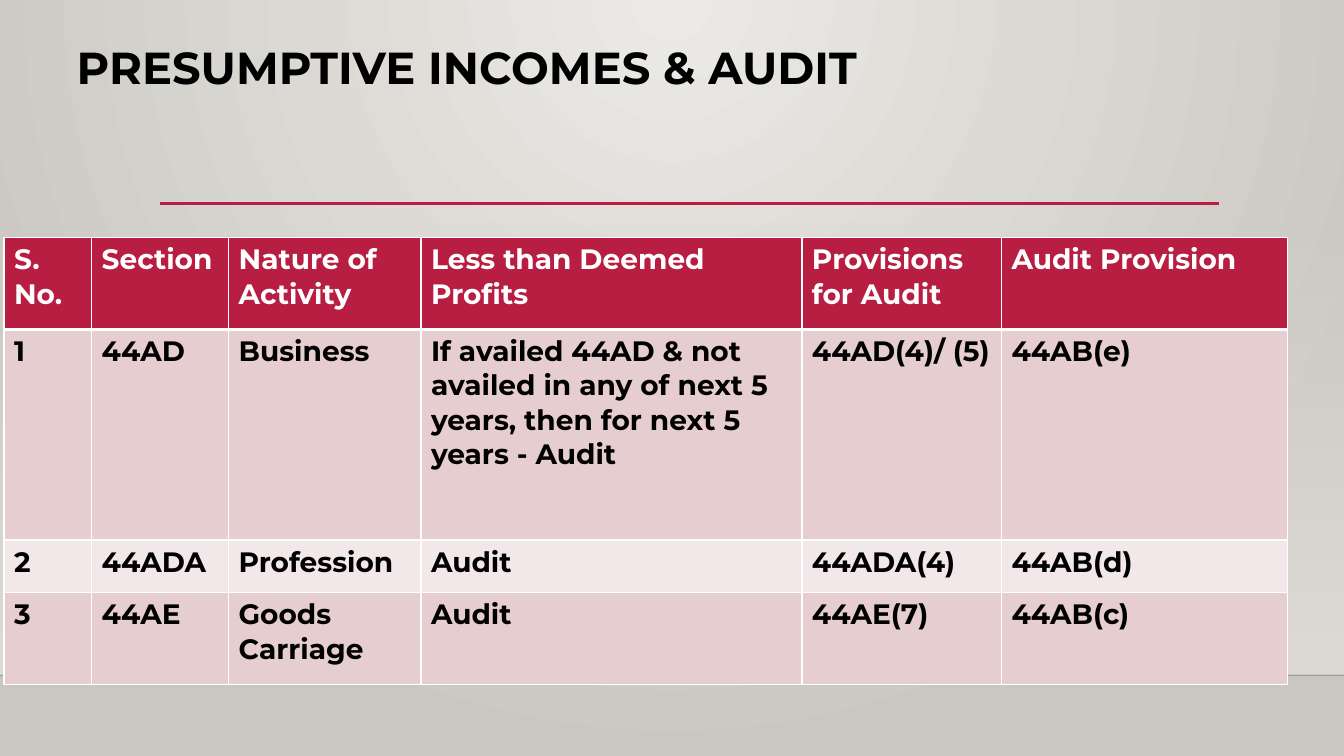
from lxml import etree
from pptx import Presentation
from pptx.dml.color import RGBColor
from pptx.enum import shapes, text
from pptx.oxml import ns
from pptx.util import Cm, Pt

FONT = "Montserrat"
COLOURS = {
    "accent": "B71E42",
    "black": "000000",
    "white": "FFFFFF",
    "odd_row": "E6CDCF",
    "even_row": "F3E8E9",
    "light": "ECEAE7",
    "dark": "CAC7C1",
    "wall": "DFDBD5",
}
SLIDE_WIDTH = 33.87
COLUMN_WIDTHS = [2.21, 3.45, 4.85, 9.6, 5.03, 7.21]
ROW_HEIGHTS = [2.31, 5.31, 1.32, 2.31]
ROWS = [
    ["S. No.", "Section", "Nature of Activity", "Less than Deemed Profits",
     "Provisions for Audit", "Audit Provision"],
    ["1", "44AD", "Business",
     "If availed 44AD & not availed in any of next 5 years, then for next 5 years - Audit",
     "44AD(4)/ (5)", "44AB(e)"],
    ["2", "44ADA", "Profession", "Audit", "44ADA(4)", "44AB(d)"],
    ["3", "44AE", "Goods Carriage", "Audit", "44AE(7)", "44AB(c)"],
]


def colour(name):
    return RGBColor.from_string(COLOURS[name])


def add_element(parent, tag, **attributes):
    return etree.SubElement(parent, ns.qn(tag), attributes)


def set_alpha(element, percent):
    """Set the opacity of the first RGB colour inside an element."""
    rgb = element.find(".//" + ns.qn("a:srgbClr"))
    add_element(rgb, "a:alpha", val=str(percent * 1000))


def set_font(paragraph, size, name):
    paragraph.font.name = FONT
    paragraph.font.size = Pt(size)
    paragraph.font.bold = True
    paragraph.font.color.rgb = colour(name)


def set_gradient(fill, first, last):
    fill.gradient()
    for stop, name in zip(fill.gradient_stops, (first, last)):
        stop.color.rgb = colour(name)


def set_background(slide):
    set_gradient(slide.background.fill, "light", "dark")
    gradient = slide.element.find(".//" + ns.qn("a:gradFill"))
    gradient.remove(gradient.find(ns.qn("a:lin")))
    circle = add_element(gradient, "a:path", path="circle")
    add_element(circle, "a:fillToRect", l="43000", t="0", r="43000", b="100000")


def add_wall(slide):
    shape = slide.shapes.add_shape(
        shapes.MSO_SHAPE.RECTANGLE, 0, Cm(5.61), Cm(SLIDE_WIDTH), Cm(11.4))
    shape.shadow.inherit = False
    shape.line.fill.background()
    set_gradient(shape.fill, "wall", "wall")
    shape.fill.gradient_angle = 270
    set_alpha(shape.element.spPr, 0)


def add_rule(slide, left, right, top, width, name):
    connector = slide.shapes.add_connector(
        shapes.MSO_CONNECTOR.STRAIGHT, Cm(left), Cm(top), Cm(right), Cm(top))
    connector.line.width = Pt(width)
    connector.line.color.rgb = colour(name)
    add_element(connector.element.spPr, "a:effectLst")
    return connector


def add_title(slide, wording):
    title = slide.shapes.title
    title.left, title.top = Cm(1.68), Cm(1.02)
    title.width, title.height = Cm(30.78), Cm(3.68)
    frame = title.text_frame
    frame.text = wording
    frame.word_wrap = True
    frame.auto_size = text.MSO_AUTO_SIZE.NONE
    frame.vertical_anchor = text.MSO_ANCHOR.TOP
    paragraph = frame.paragraphs[0]
    paragraph.alignment = text.PP_ALIGN.LEFT
    paragraph.line_spacing = 0.9
    set_font(paragraph, 32, "black")


def set_borders(cell, widths):
    properties = cell._tc.get_or_add_tcPr()
    for side, width in widths.items():
        line = add_element(properties, f"a:ln{side}", w=str(Pt(width)))
        fill = add_element(line, "a:solidFill")
        add_element(fill, "a:srgbClr", val=COLOURS["white"])


def format_cell(cell, row):
    borders = {"L": 1, "R": 1, "T": 3 if row == 1 else 1, "B": 3 if row == 0 else 1}
    set_borders(cell, borders)
    fill_name = "accent" if row == 0 else "odd_row" if row % 2 else "even_row"
    cell.fill.solid()
    cell.fill.fore_color.rgb = colour(fill_name)
    set_font(cell.text_frame.paragraphs[0], 20, "black" if row else "white")


def add_audit_table(slide):
    table = slide.shapes.add_table(
        len(ROWS), len(COLUMN_WIDTHS), Cm(0.1), Cm(5.99),
        Cm(sum(COLUMN_WIDTHS)), Cm(sum(ROW_HEIGHTS))).table
    for column, width in zip(table.columns, COLUMN_WIDTHS):
        column.width = Cm(width)
    for row, (height, wordings) in enumerate(zip(ROW_HEIGHTS, ROWS)):
        table.rows[row].height = Cm(height)
        for column, wording in enumerate(wordings):
            cell = table.cell(row, column)
            cell.text = wording
            format_cell(cell, row)


def main():
    presentation = Presentation()
    presentation.slide_width, presentation.slide_height = Cm(SLIDE_WIDTH), Cm(19.05)
    slide = presentation.slides.add_slide(presentation.slide_layouts[5])

    # Backdrop: wall, floor edge and accent rule
    set_background(slide)
    add_wall(slide)
    floor_edge = add_rule(slide, 0, SLIDE_WIDTH, 17.02, 1, "black")
    set_alpha(floor_edge.element.spPr, 20)
    add_rule(slide, 4.04, 30.73, 5.13, 2.5, "accent")

    # Content
    add_title(slide, "PRESUMPTIVE INCOMES & AUDIT")
    add_audit_table(slide)

    presentation.save("out.pptx")


if __name__ == "__main__":
    main()
